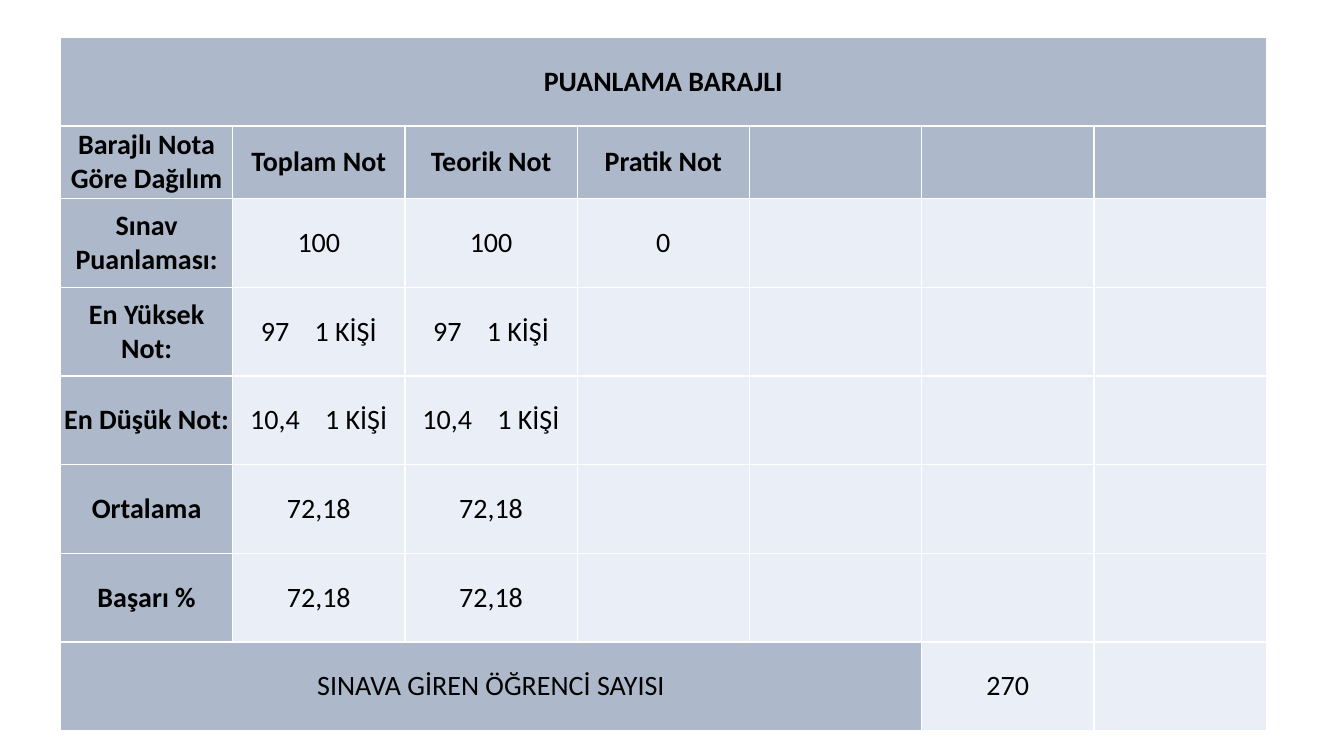
import pptx
import pptx.util
import pptx.dml.color
import pptx.enum.text

HEADER_FILL = pptx.dml.color.RGBColor(0xAD, 0xB9, 0xCA)
BODY_FILL = pptx.dml.color.RGBColor(0xEA, 0xEF, 0xF7)
BLACK = pptx.dml.color.RGBColor(0, 0, 0)

COLUMN_WIDTH = pptx.util.Inches(11.96 / 7)
ROW_HEIGHT = pptx.util.Inches(0.88)
HEADING_HEIGHT = pptx.util.Inches(0.72)

score_rows = [
    ["PUANLAMA BARAJLI"],
    ["Barajlı Nota Göre Dağılım", "Toplam Not", "Teorik Not", "Pratik Not"],
    ["Sınav Puanlaması:", "100", "100", "0"],
    ["En Yüksek Not:", "97    1 KİŞİ", "97    1 KİŞİ"],
    ["En Düşük Not:", "10,4    1 KİŞİ", "10,4    1 KİŞİ"],
    ["Ortalama", "72,18", "72,18"],
    ["Başarı %", "72,18", "72,18"],
    ["SINAVA GİREN ÖĞRENCİ SAYISI", "", "", "", "", "270"],
]
row_count, column_count = len(score_rows), 7
student_row = row_count - 1
student_span = 5

presentation = pptx.Presentation()
presentation.slide_width = pptx.util.Inches(13.33)
presentation.slide_height = pptx.util.Inches(7.5)
slide = presentation.slides.add_slide(presentation.slide_layouts[6])

scores = slide.shapes.add_table(
    row_count, column_count,
    pptx.util.Inches(0.6), pptx.util.Inches(0.37),
    COLUMN_WIDTH * column_count, ROW_HEIGHT * (row_count - 1) + HEADING_HEIGHT,
).table
scores.first_row = False
scores.horz_banding = False

for column in scores.columns:
    column.width = COLUMN_WIDTH
for row in scores.rows:
    row.height = ROW_HEIGHT
scores.rows[1].height = HEADING_HEIGHT

scores.cell(0, 0).merge(scores.cell(0, column_count - 1))
scores.cell(student_row, 0).merge(scores.cell(student_row, student_span - 1))

for r, labels in enumerate(score_rows):
    for c in range(column_count):
        cell = scores.cell(r, c)
        is_heading = r < 2 or c == 0 or (r == student_row and c < student_span)
        cell.fill.solid()
        cell.fill.fore_color.rgb = HEADER_FILL if is_heading else BODY_FILL
        cell.margin_left = cell.margin_right = 0
        cell.margin_top = cell.margin_bottom = 0
        cell.vertical_anchor = pptx.enum.text.MSO_ANCHOR.MIDDLE
        if c < len(labels) and labels[c]:
            cell.text = labels[c]
            paragraph = cell.text_frame.paragraphs[0]
            paragraph.alignment = pptx.enum.text.PP_ALIGN.CENTER
            paragraph.font.name = "Calibri"
            paragraph.font.size = pptx.util.Pt(20)
            paragraph.font.bold = is_heading and r != student_row
            paragraph.font.color.rgb = BLACK

presentation.save("out.pptx")
